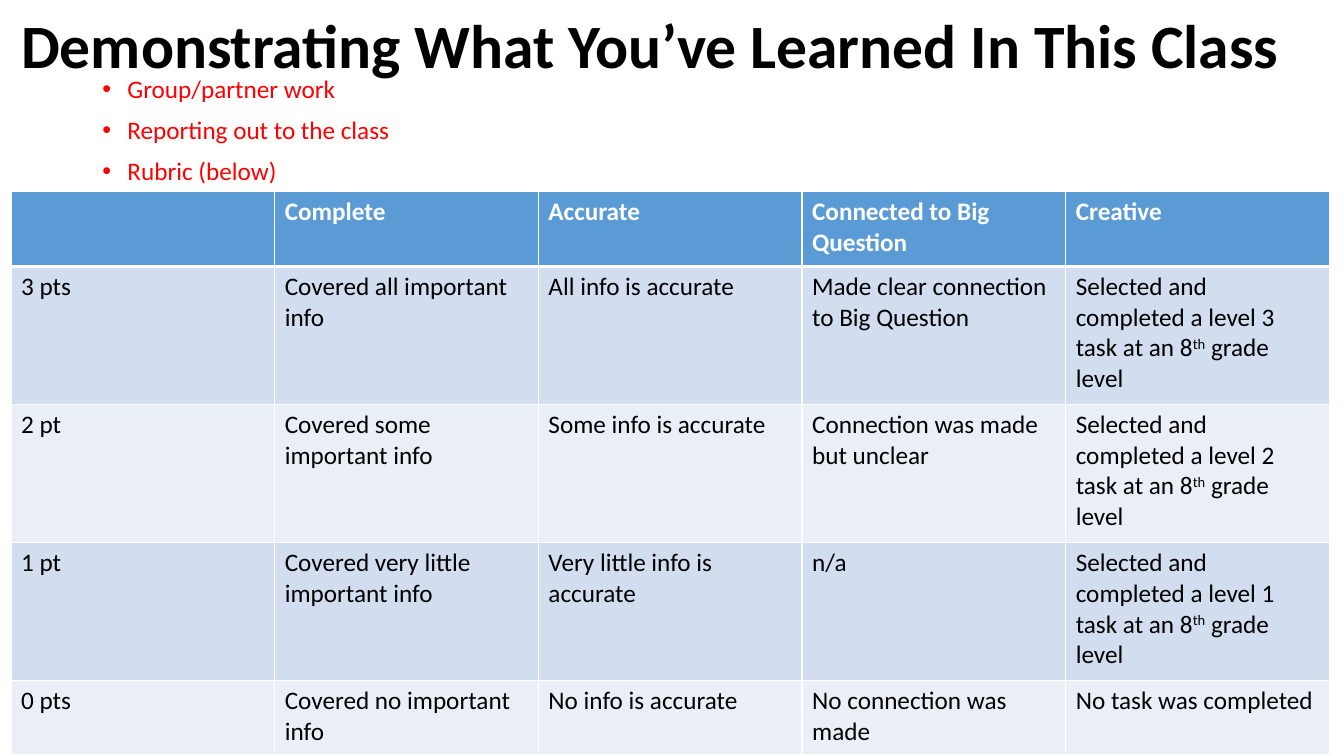
import pptx
import pptx.util
import pptx.dml.color
import pptx.enum.text
import pptx.oxml
from lxml import etree

Pt = pptx.util.Pt
FONT = "Calibri"
COLORS = {
    "black": "000000",
    "white": "FFFFFF",
    "red": "FF0000",
    "head": "5B9BD5",
    "odd": "D2DEEF",
    "even": "EAEFF7",
}
TITLE = "Demonstrating What You’ve Learned In This Class"
POINTS = ["Group/partner work", "Reporting out to the class", "Rubric (below)"]
# Text between carets is superscript
TASK = "Selected and completed a level {} task at an 8^th^ grade level"
RUBRIC = [
    ["", "Complete", "Accurate", "Connected to Big Question", "Creative"],
    ["3 pts", "Covered all important info", "All info is accurate",
     "Made clear connection to Big Question", TASK.format(3)],
    ["2 pt", "Covered some important info", "Some info is accurate",
     "Connection was made but unclear", TASK.format(2)],
    ["1 pt", "Covered very little important info",
     "Very little info is accurate", "n/a", TASK.format(1)],
    ["0 pts", "Covered no important info", "No info is accurate",
     "No connection was made", "No task was completed"],
]
HEIGHTS = [53.3, 98.6, 98.6, 98.6, 53.3]
LEFT, WIDTH = 7.9, 941.8


def color(name):
    return pptx.dml.color.RGBColor.from_string(COLORS[name])


def style(para, size, name, bold=False):
    para.font.name = FONT
    para.font.size = Pt(size)
    para.font.bold = bold
    para.font.color.rgb = color(name)


def add_title(slide):
    title = slide.shapes.title
    title.left, title.top = Pt(LEFT), Pt(0)
    title.width, title.height = Pt(WIDTH), Pt(69.8)
    frame = title.text_frame
    frame.text = TITLE
    frame.word_wrap = True
    frame.auto_size = pptx.enum.text.MSO_AUTO_SIZE.NONE
    frame.vertical_anchor = pptx.enum.text.MSO_ANCHOR.MIDDLE
    para = frame.paragraphs[0]
    para.alignment = pptx.enum.text.PP_ALIGN.LEFT
    para.line_spacing = 0.9
    style(para, 44, "black", True)


def add_bullets(slide):
    box = slide.shapes.add_textbox(Pt(66), Pt(51.1), Pt(828), Pt(387.4))
    frame = box.text_frame
    frame.word_wrap = True
    frame.text = "\n".join(POINTS)
    for para in frame.paragraphs:
        para.line_spacing = 0.9
        para.space_before = Pt(10)
        style(para, 18, "red")
        props = para._p.get_or_add_pPr()
        props.set("marL", str(Pt(18)))
        props.set("indent", str(-Pt(18)))
        face = etree.SubElement(props, pptx.oxml.ns.qn("a:buFont"))
        face.set("typeface", "Arial")
        mark = etree.SubElement(props, pptx.oxml.ns.qn("a:buChar"))
        mark.set("char", "•")
        # Default run settings come after the bullet
        props.append(props.find(pptx.oxml.ns.qn("a:defRPr")))


def add_edges(cell, widths):
    props = cell._tc.get_or_add_tcPr()
    for i, (side, width) in enumerate(widths.items()):
        line = etree.Element(pptx.oxml.ns.qn("a:ln" + side), w=str(Pt(width)))
        fill = etree.SubElement(line, pptx.oxml.ns.qn("a:solidFill"))
        etree.SubElement(fill, pptx.oxml.ns.qn("a:srgbClr"),
                         val=COLORS["white"])
        props.insert(i, line)


def fill_cell(cell, text, row):
    para = cell.text_frame.paragraphs[0]
    for i, part in enumerate(text.split("^")):
        if part:
            run = para.add_run()
            run.text = part
            if i % 2:
                run.font._element.set("baseline", "30000")
    style(para, 18, "black" if row else "white", row == 0)
    cell.fill.solid()
    band = "odd" if row % 2 else "even"
    cell.fill.fore_color.rgb = color(band if row else "head")
    add_edges(cell, {"L": 1, "R": 1, "T": 3 if row == 1 else 1,
                     "B": 1 if row else 3})


def add_rubric(slide):
    cols = len(RUBRIC[0])
    table = slide.shapes.add_table(len(RUBRIC), cols, Pt(LEFT), Pt(137),
                                   Pt(WIDTH), Pt(sum(HEIGHTS))).table
    for col in table.columns:
        col.width = Pt(WIDTH / cols)
    for r, texts in enumerate(RUBRIC):
        table.rows[r].height = Pt(HEIGHTS[r])
        for c, text in enumerate(texts):
            fill_cell(table.cell(r, c), text, r)


def main():
    deck = pptx.Presentation()
    deck.slide_width, deck.slide_height = Pt(960), Pt(540)
    slide = deck.slides.add_slide(deck.slide_layouts[5])
    # Heading and activities
    add_title(slide)
    add_bullets(slide)
    # Scoring table
    add_rubric(slide)
    deck.save("out.pptx")


if __name__ == "__main__":
    main()
